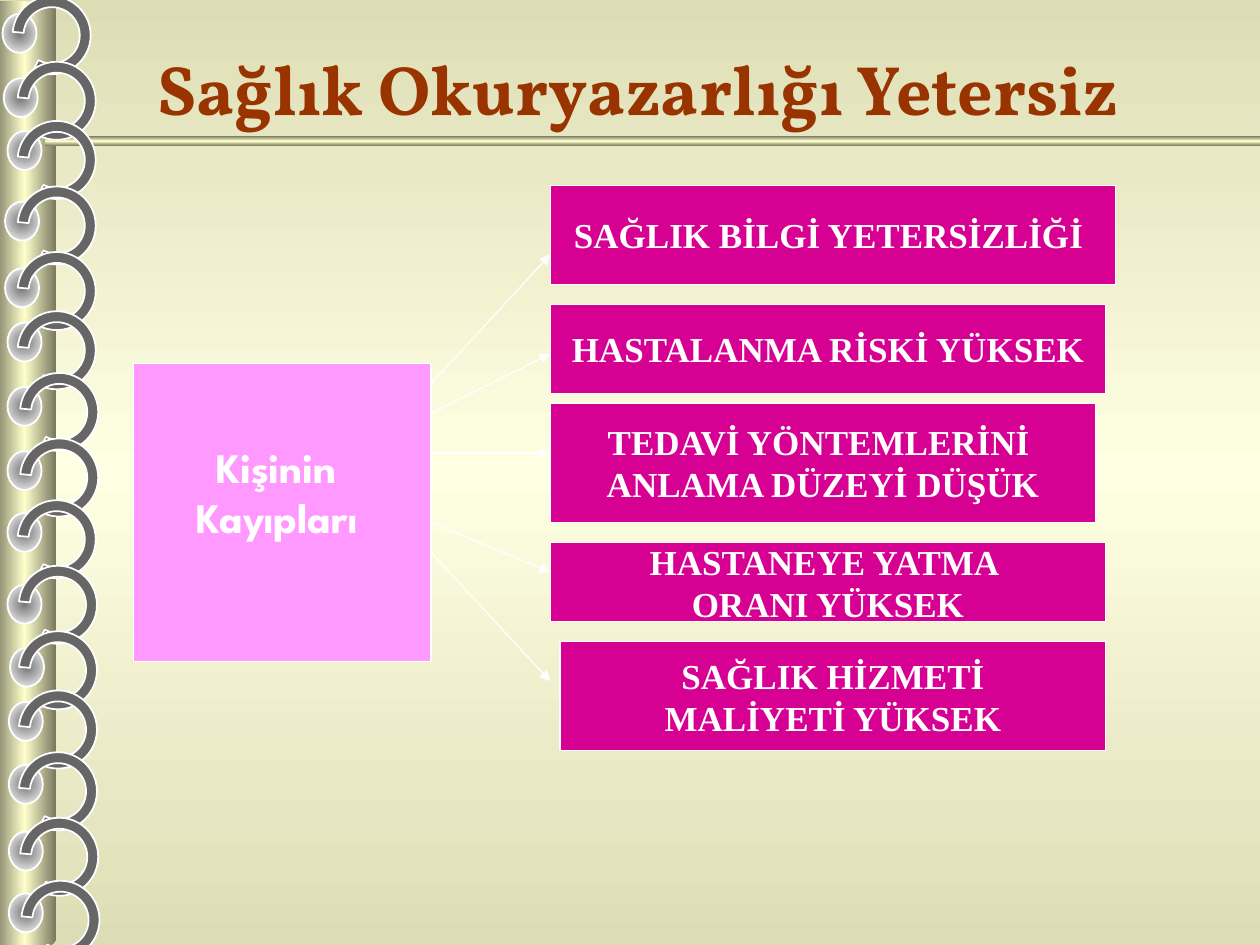
from dataclasses import dataclass

from lxml import etree
from pptx import Presentation
from pptx.dml.color import RGBColor
from pptx.enum.shapes import MSO_CONNECTOR, MSO_SHAPE
from pptx.enum.text import MSO_ANCHOR, MSO_AUTO_SIZE, PP_ALIGN
from pptx.oxml.ns import qn
from pptx.util import Inches, Mm, Pt

RECTANGLE = MSO_SHAPE.RECTANGLE
ROUNDED = MSO_SHAPE.ROUNDED_RECTANGLE
OVAL = MSO_SHAPE.OVAL
BLOCK_ARC = MSO_SHAPE.BLOCK_ARC
STRAIGHT = MSO_CONNECTOR.STRAIGHT
MIDDLE = MSO_ANCHOR.MIDDLE
CENTER = PP_ALIGN.CENTER
NO_AUTOFIT = MSO_AUTO_SIZE.NONE

WHITE = RGBColor(0xFF, 0xFF, 0xFF)
PAGE_EDGE = RGBColor(0xDD, 0xDD, 0xB5)
PAGE_MIDDLE = RGBColor(0xFF, 0xFF, 0xE3)
SPINE_EDGE = RGBColor(0x76, 0x76, 0x5E)
SPINE_MIDDLE = RGBColor(0xFF, 0xFF, 0xCC)
HOLE_GREY = RGBColor(0x76, 0x76, 0x76)
RING_GREY = RGBColor(0x66, 0x66, 0x66)
BROWN = RGBColor(0x99, 0x33, 0x00)
PINK = RGBColor(0xFF, 0x99, 0xFF)
MAGENTA = RGBColor(0xD6, 0x00, 0x93)

CELL = Mm(2)
GRID_LEFT, GRID_TOP = Inches(1.06), Inches(1.47)
SOURCE_RIGHT, TARGET_LEFT = 30, 42
HOLE_SIZE = (0.27, 0.31)
RING_SIZE = (0.62, 0.62)
RING_START, RING_END, RING_THICKNESS = 185, 118, 0.14
ADJUSTMENT_PER_DEGREE = 0.6


@dataclass(frozen=True)
class Box:
    column: float
    row: float
    columns: float
    rows: float
    lines: tuple[str, ...]
    fill: RGBColor = MAGENTA
    font: str = "Times New Roman"
    size: int = 20
    bottom_inset: float = 0.05


@dataclass(frozen=True)
class Arrow:
    start_row: float
    end_row: float


@dataclass(frozen=True)
class Binding:
    hole_left: float
    hole_top: float
    ring_left: float
    ring_top: float


BOXES = (
    Box(0, 18, SOURCE_RIGHT, 30, ("Kişinin ", "Kayıpları "), PINK, "League Spartan", 24, 0.38),
    Box(TARGET_LEFT, 0, 57, 10, ("SAĞLIK BİLGİ YETERSİZLİĞİ ",)),
    Box(TARGET_LEFT, 12, 56, 9, ("HASTALANMA RİSKİ YÜKSEK",)),
    Box(TARGET_LEFT, 22, 55, 12, ("TEDAVİ YÖNTEMLERİNİ ", "ANLAMA DÜZEYİ DÜŞÜK")),
    Box(TARGET_LEFT, 36, 56, 8, ("HASTANEYE YATMA ", "ORANI YÜKSEK")),
    Box(TARGET_LEFT + 1, 46, 55, 11, ("SAĞLIK HİZMETİ", "MALİYETİ YÜKSEK")),
)
ARROWS = (Arrow(20, 7), Arrow(23, 17), Arrow(27, 27), Arrow(34, 39), Arrow(37, 50))
BINDINGS = (
    Binding(0.02, 0.11, 0.10, -0.03),
    Binding(0.03, 0.62, 0.14, 0.49),
    Binding(0.06, 1.04, 0.14, 0.96),
    Binding(0.04, 1.60, 0.14, 1.48),
    Binding(0.04, 2.13, 0.14, 2.00),
    Binding(0.06, 2.56, 0.14, 2.47),
    Binding(0.06, 3.07, 0.16, 2.96),
    Binding(0.06, 3.58, 0.16, 3.48),
    Binding(0.06, 4.07, 0.14, 3.97),
    Binding(0.06, 4.64, 0.15, 4.49),
    Binding(0.08, 5.14, 0.15, 5.01),
    Binding(0.07, 5.57, 0.15, 5.48),
    Binding(0.07, 6.07, 0.15, 5.97),
    Binding(0.07, 6.60, 0.16, 6.49),
    Binding(0.07, 7.09, 0.17, 6.99),
)


def grid_x(column: float) -> int:
    return int(GRID_LEFT + column * CELL)


def grid_y(row: float) -> int:
    return int(GRID_TOP + row * CELL)


def set_gradient(fill, element, colors: tuple, angle: int | None) -> None:
    fill.gradient()
    gradient = next(element.iter(qn("a:gradFill")))
    for child in list(gradient):
        gradient.remove(child)
    stops = etree.SubElement(gradient, qn("a:gsLst"))
    for index, color in enumerate(colors):
        position = index * 100000 // (len(colors) - 1)
        stop = etree.SubElement(stops, qn("a:gs"), pos=str(position))
        etree.SubElement(stop, qn("a:srgbClr"), val=str(color))
    if angle is None:
        shade = etree.SubElement(gradient, qn("a:path"), path="circle")
        etree.SubElement(shade, qn("a:fillToRect"), l="50000", t="50000", r="50000", b="50000")
    else:
        etree.SubElement(gradient, qn("a:lin"), ang=str(angle * 60000), scaled="0")


def set_outline(shape, width: float) -> None:
    shape.shadow.inherit = False
    shape.line.color.rgb = WHITE
    shape.line.width = Pt(width)


def write_text(frame, lines: tuple[str, ...], *, font: str, size: int, color: RGBColor) -> None:
    frame.vertical_anchor = MIDDLE
    for index, line in enumerate(lines):
        paragraph = frame.paragraphs[0] if index == 0 else frame.add_paragraph()
        paragraph.alignment = CENTER
        run = paragraph.add_run()
        run.text = line
        run.font.name = font
        run.font.size = Pt(size)
        run.font.bold = True
        run.font.color.rgb = color


def draw_bar(slide, left: float, top: float, width: float, height: float, angle: int) -> None:
    bar = slide.shapes.add_shape(ROUNDED, Inches(left), Inches(top), Inches(width), Inches(height))
    bar.shadow.inherit = False
    bar.line.fill.background()
    set_gradient(bar.fill, bar.element, (SPINE_EDGE, SPINE_MIDDLE, SPINE_EDGE), angle)


def draw_binding(slide, binding: Binding) -> None:
    hole = slide.shapes.add_shape(
        OVAL, Inches(binding.hole_left), Inches(binding.hole_top), *map(Inches, HOLE_SIZE))
    set_gradient(hole.fill, hole.element, (HOLE_GREY, WHITE), None)
    set_outline(hole, 1)
    ring = slide.shapes.add_shape(
        BLOCK_ARC, Inches(binding.ring_left), Inches(binding.ring_top), *map(Inches, RING_SIZE))
    ring.adjustments[0] = RING_START * ADJUSTMENT_PER_DEGREE
    ring.adjustments[1] = RING_END * ADJUSTMENT_PER_DEGREE
    ring.adjustments[2] = RING_THICKNESS
    ring.fill.solid()
    ring.fill.fore_color.rgb = RING_GREY
    set_outline(ring, 1)


def draw_box(slide, box: Box) -> None:
    shape = slide.shapes.add_shape(
        RECTANGLE, grid_x(box.column), grid_y(box.row),
        int(box.columns * CELL), int(box.rows * CELL))
    shape.fill.solid()
    shape.fill.fore_color.rgb = box.fill
    set_outline(shape, 0.75)
    shape.text_frame.word_wrap = False
    shape.text_frame.margin_bottom = Inches(box.bottom_inset)
    write_text(shape.text_frame, box.lines, font=box.font, size=box.size, color=WHITE)


def draw_arrow(slide, arrow: Arrow) -> None:
    connector = slide.shapes.add_connector(
        STRAIGHT, grid_x(SOURCE_RIGHT), grid_y(arrow.start_row),
        grid_x(TARGET_LEFT), grid_y(arrow.end_row))
    connector.line.color.rgb = WHITE
    connector.line.width = Pt(0.75)
    properties = connector.element.spPr
    etree.SubElement(properties.find(qn("a:ln")), qn("a:tailEnd"), type="triangle")
    etree.SubElement(properties, qn("a:effectLst"))


def main() -> None:
    presentation = Presentation()
    presentation.slide_width, presentation.slide_height = Inches(10), Inches(7.5)
    slide = presentation.slides.add_slide(presentation.slide_layouts[5])
    set_gradient(slide.background.fill, slide.element, (PAGE_EDGE, PAGE_MIDDLE, PAGE_EDGE), 90)

    title = slide.shapes.title
    title.left, title.top = Inches(1.02), Inches(0.21)
    title.width, title.height = Inches(8.2), Inches(0.97)
    title.text_frame.auto_size = NO_AUTOFIT
    write_text(title.text_frame, ("Sağlık Okuryazarlığı Yetersiz ",),
               font="Vollkorn", size=40, color=BROWN)

    draw_bar(slide, -0.06, 0.01, 0.51, 7.5, 0)
    draw_bar(slide, 0.36, 1.08, 9.65, 0.08, 90)
    for binding in BINDINGS:
        draw_binding(slide, binding)
    for box in BOXES:
        draw_box(slide, box)
    for arrow in ARROWS:
        draw_arrow(slide, arrow)
    presentation.save("out.pptx")


if __name__ == "__main__":
    main()
